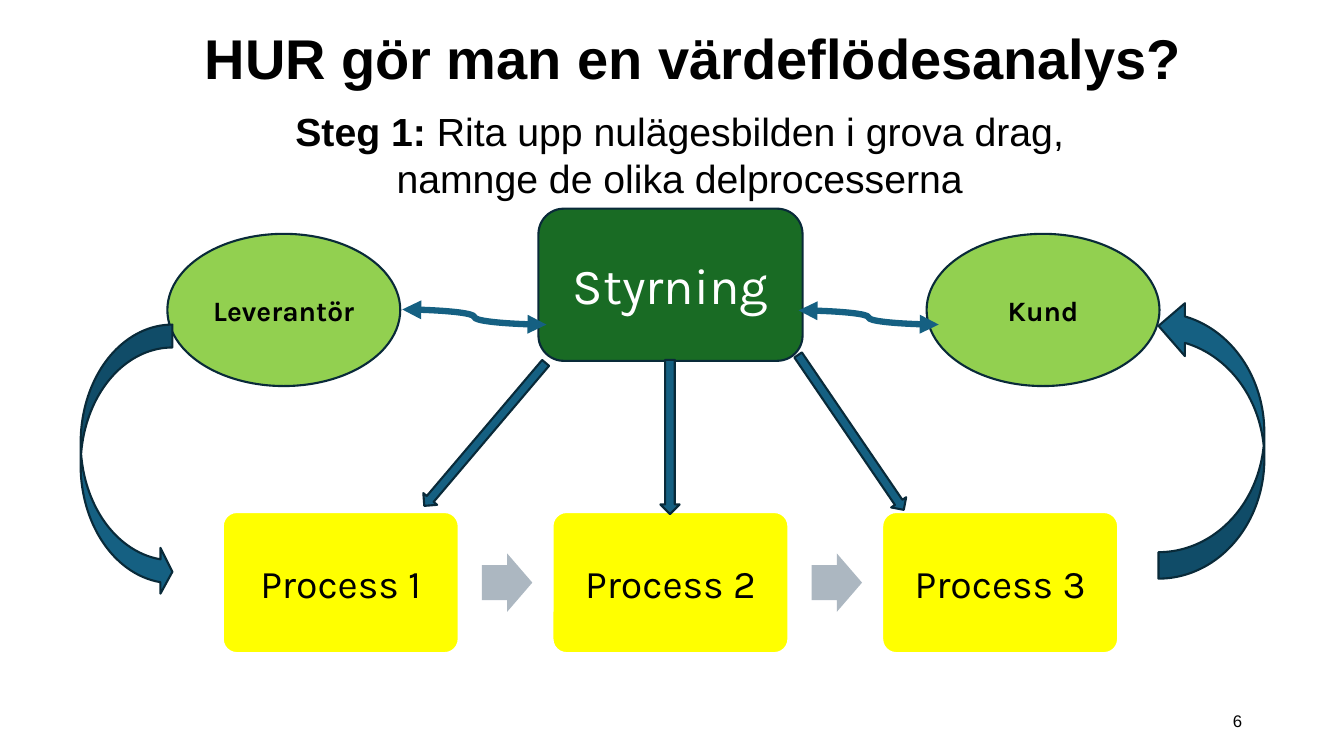
from dataclasses import dataclass

from lxml import etree
from pptx import Presentation
from pptx.dml.color import RGBColor
from pptx.enum.shapes import MSO_CONNECTOR, MSO_SHAPE
from pptx.enum.text import MSO_ANCHOR, MSO_AUTO_SIZE, PP_ALIGN
from pptx.oxml.ns import qn
from pptx.util import Emu, Pt

PX = 9144  # EMU per px, 100 px to the inch
TITLE_AND_CONTENT = 1
LEFT, CENTER, RIGHT = PP_ALIGN.LEFT, PP_ALIGN.CENTER, PP_ALIGN.RIGHT
TOP, MIDDLE = MSO_ANCHOR.TOP, MSO_ANCHOR.MIDDLE
ROUNDED, OVAL = MSO_SHAPE.ROUNDED_RECTANGLE, MSO_SHAPE.OVAL
RIGHT_ARROW, DOWN_ARROW = MSO_SHAPE.RIGHT_ARROW, MSO_SHAPE.DOWN_ARROW
CURVED_RIGHT, CURVED_UP = MSO_SHAPE.CURVED_RIGHT_ARROW, MSO_SHAPE.CURVED_UP_ARROW
CURVE = MSO_CONNECTOR.CURVE


@dataclass(frozen=True)
class Theme:
    heading_font: str = "Arial"
    diagram_font: str = "Karla"
    black: str = "000000"
    white: str = "FFFFFF"
    outline: str = "092A39"
    flow: str = "156082"
    control: str = "196B24"
    party: str = "92D050"
    process: str = "FFFF00"
    step: str = "ACB7C1"
    title_size: int = 40
    control_size: int = 36
    body_size: int = 28
    party_size: int = 20
    number_size: int = 12
    outline_width: float = 1.5
    link_width: float = 4.5


THEME = Theme()


def px(*lengths):
    return [Emu(length * PX) for length in lengths]


def apply(target, values):
    for name, value in values.items():
        setattr(target, name, value)


def write(frame, runs, size, font, color=THEME.black, align=CENTER,
          anchor=MIDDLE, wrap=True):
    """Fill a text frame with one paragraph of (text, bold) runs."""
    apply(frame, {"word_wrap": wrap, "vertical_anchor": anchor,
                  "auto_size": MSO_AUTO_SIZE.NONE})
    paragraph = frame.paragraphs[0]
    apply(paragraph, {"alignment": align, "space_before": Pt(0)})
    for text, bold in runs:
        run = paragraph.add_run()
        run.text = text
        apply(run.font, {"name": font, "size": Pt(size), "bold": bold})
        run.font.color.rgb = RGBColor.from_string(color)


def place(placeholder, box):
    apply(placeholder, dict(zip(("left", "top", "width", "height"), px(*box))))
    return placeholder.text_frame


def remove_bullet(paragraph):
    properties = paragraph._p.get_or_add_pPr()
    properties.set("marL", "0")
    properties.set("indent", "0")
    etree.SubElement(properties, qn("a:buNone"))


def add_figure(slide, kind, box, fill, line=THEME.outline, rotation=0, adjust=()):
    figure = slide.shapes.add_shape(kind, *px(*box))
    figure.shadow.inherit = False
    figure.rotation = rotation
    for index, value in enumerate(adjust):
        figure.adjustments[index] = value
    figure.fill.solid()
    figure.fill.fore_color.rgb = RGBColor.from_string(fill)
    if line:
        figure.line.color.rgb = RGBColor.from_string(line)
        figure.line.width = Pt(THEME.outline_width)
    else:
        figure.line.fill.background()
    return figure


def add_link(slide, start, end):
    """Add a curved line with an arrowhead at both ends."""
    link = slide.shapes.add_connector(CURVE, *px(*start, *end))
    link.line.color.rgb = RGBColor.from_string(THEME.flow)
    link.line.width = Pt(THEME.link_width)
    outline = link.line._get_or_add_ln()
    for end_tag in ("a:headEnd", "a:tailEnd"):
        etree.SubElement(outline, qn(end_tag), type="triangle")
    etree.SubElement(link._element.spPr, qn("a:effectLst"))


def add_headings(slide):
    write(place(slide.shapes.title, (193, 18, 999, 77)),
          [("HUR gör man en värdeflödesanalys?", True)],
          THEME.title_size, THEME.heading_font, align=LEFT, anchor=TOP, wrap=False)
    step = place(slide.placeholders[1], (256, 101, 836, 105))
    remove_bullet(step.paragraphs[0])
    write(step, [("Steg 1: ", True),
                 ("Rita upp nulägesbilden i grova drag, namnge de olika delprocesserna", False)],
          THEME.body_size, THEME.heading_font, anchor=TOP)
    number = slide.shapes.add_textbox(*px(942, 695, 300, 40))
    write(number.text_frame, [("6", False)], THEME.number_size,
          THEME.heading_font, align=RIGHT)


def add_processes(slide, count=3, left=221, pitch=327):
    for index in range(count):
        x = left + index * pitch
        process = add_figure(slide, ROUNDED, (x, 508, 234, 140), THEME.process,
                             THEME.white, adjust=[0.1])
        write(process.text_frame, [(f"Process {index + 1}", False)],
              THEME.body_size, THEME.diagram_font)
        if index < count - 1:
            add_figure(slide, RIGHT_ARROW, (x + 257, 549, 50, 58), THEME.step,
                       None, adjust=[0.6, 0.5])


def add_parties(slide):
    control = add_figure(slide, ROUNDED, (534, 207, 262, 151), THEME.control)
    write(control.text_frame, [("Styrning", False)], THEME.control_size,
          THEME.diagram_font, THEME.white)
    for name, x in (("Leverantör", 166), ("Kund", 919)):
        party = add_figure(slide, OVAL, (x, 232, 231, 151), THEME.party)
        write(party.text_frame, [(name, True)], THEME.party_size, THEME.diagram_font)


def add_flows(slide):
    for box, rotation in (((472, 338, 18, 186), 40.3),
                          ((655, 357, 19, 153), 0),
                          ((835, 336, 18, 186), 325.7)):
        add_figure(slide, DOWN_ARROW, box, THEME.flow, rotation=rotation)
    add_figure(slide, CURVED_RIGHT, (80, 322, 91, 268), THEME.flow,
               adjust=[0.25, 0.5, 0.13])
    add_figure(slide, CURVED_UP, (1063, 383, 277, 105), THEME.flow, rotation=270)
    add_link(slide, (399, 307), (542, 322))
    add_link(slide, (792, 308), (931, 322))


def main():
    deck = Presentation()
    deck.slide_width, deck.slide_height = px(1333, 750)
    slide = deck.slides.add_slide(deck.slide_layouts[TITLE_AND_CONTENT])
    add_headings(slide)
    add_processes(slide)
    add_parties(slide)
    add_flows(slide)
    deck.save("out.pptx")


if __name__ == "__main__":
    main()
